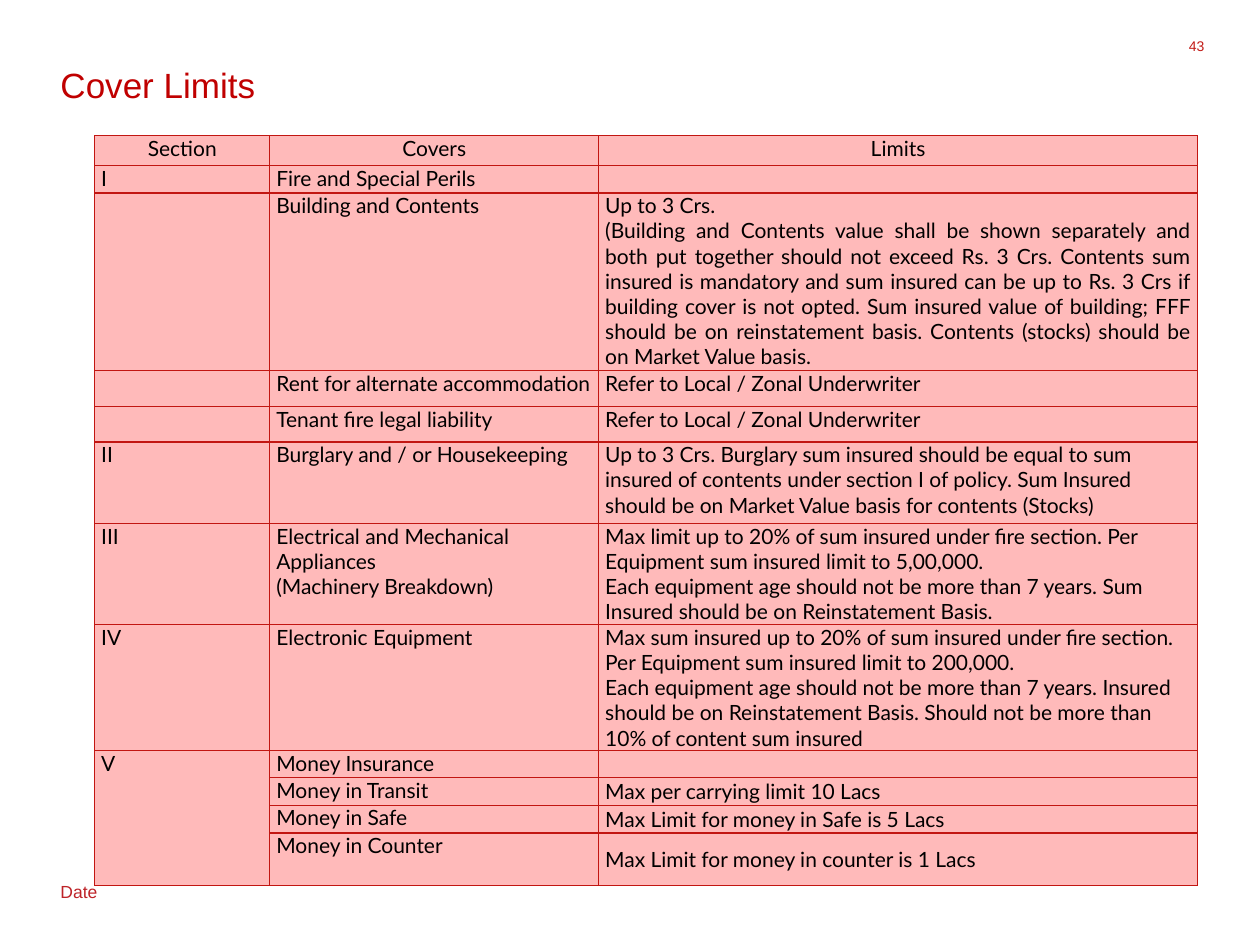
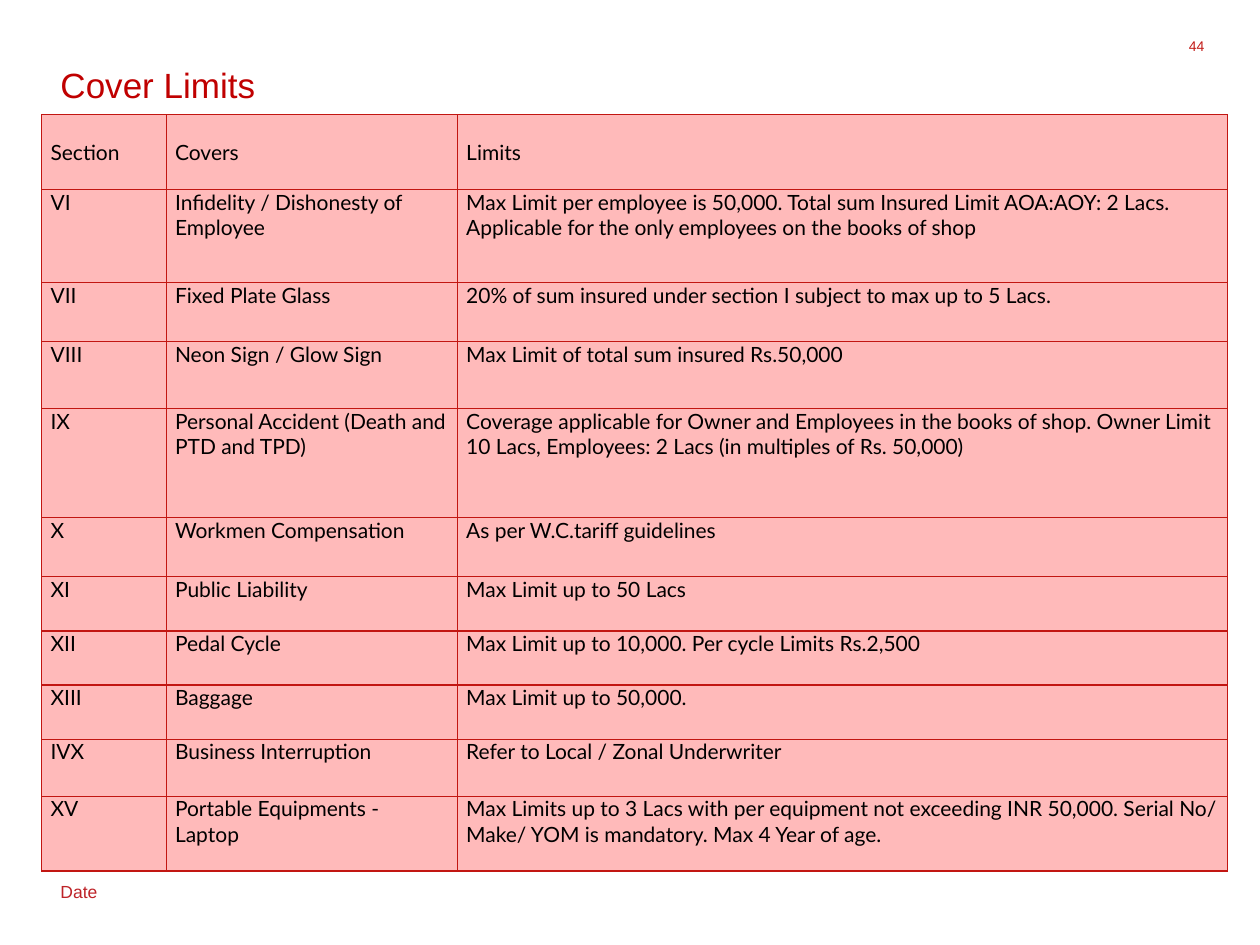
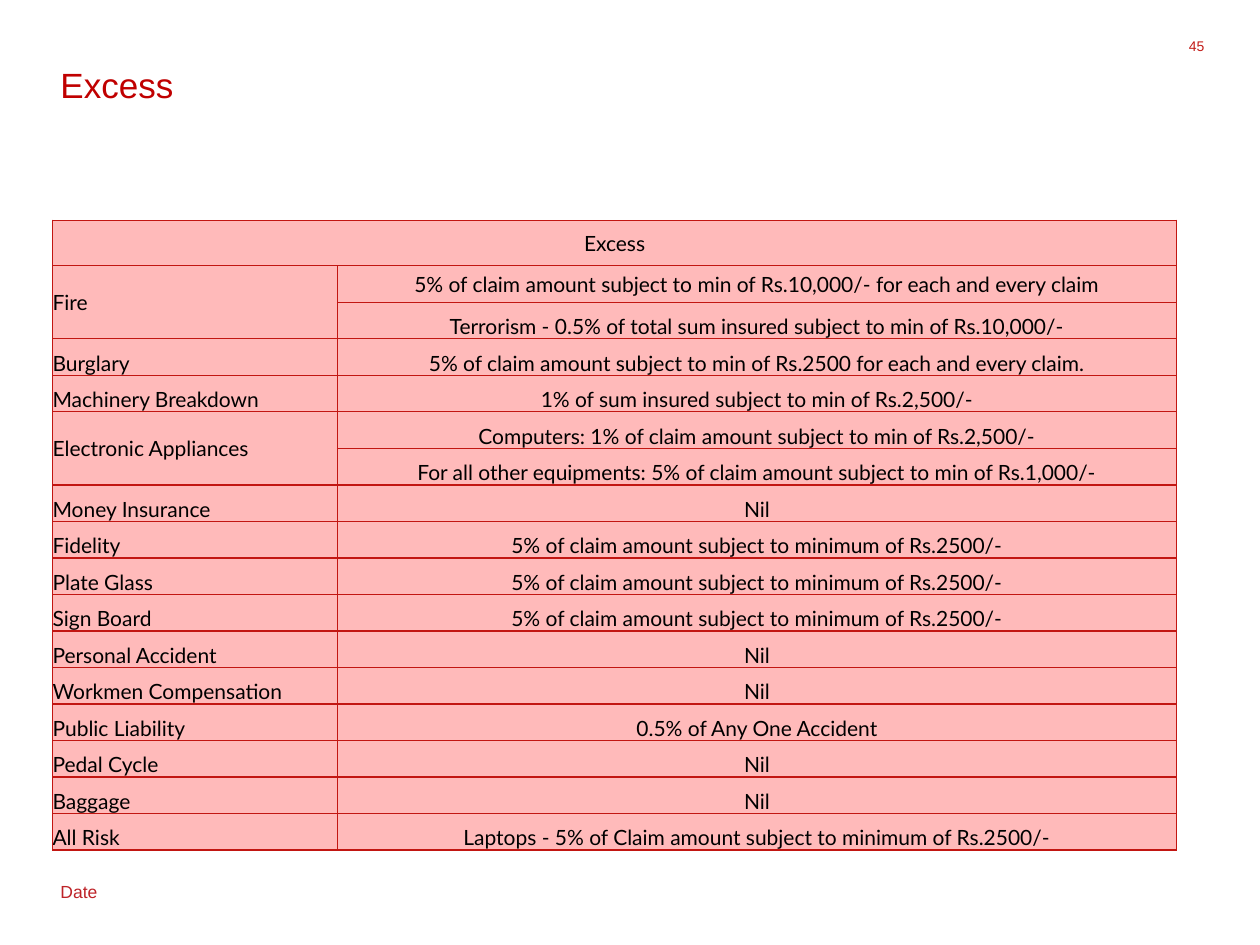
import dataclasses
import typing

import lxml.etree
import pptx
import pptx.dml.color
import pptx.enum.text
import pptx.oxml.ns
import pptx.util

Cm = pptx.util.Cm
Pt = pptx.util.Pt
Align = pptx.enum.text.PP_ALIGN
Anchor = pptx.enum.text.MSO_ANCHOR

COLORS = {
    "background": "FFFFFF",
    "title": "C00000",
    "date": "BE2328",
    "number": "C21B17",
    "cell": "FFBABA",
    "border": "C21612",
    "text": "000000",
}
BORDER_WIDTH = Pt(0.75)
Position = tuple[int, int]


@dataclasses.dataclass(frozen=True)
class TableSlide:
    title: str
    number: int
    left: float
    top: float
    columns: tuple[float, ...]
    heights: tuple[float, ...]
    rows: tuple[tuple[str, ...], ...]
    side_margin: float = 0
    header_margin: float = 0
    anchor: Anchor = Anchor.TOP
    header_align: Align = Align.LEFT
    column_aligns: tuple[Align, ...] = (Align.LEFT,) * 3
    aligns: dict[Position, Align] = dataclasses.field(default_factory=dict)
    middle: tuple[Position, ...] = ()
    merges: tuple[tuple[Position, Position], ...] = ()


UNDERWRITER = "Refer to Local / Zonal Underwriter"
MINIMUM = "5% of claim amount subject to minimum of Rs.2500/-"
HEADINGS = ("Section", "Covers", "Limits")

FIRST_LIMITS = (
    HEADINGS,
    ("I", "Fire and Special Perils", ""),
    ("", "Building and Contents",
     "Up to 3 Crs.\n(Building and Contents value shall be shown separately and both put "
     "together should not exceed Rs. 3 Crs. Contents sum insured is mandatory and sum "
     "insured can be up to Rs. 3 Crs if building cover is not opted. Sum insured value of "
     "building; FFF should be on reinstatement basis. Contents (stocks) should be on "
     "Market Value basis."),
    ("", "Rent for alternate accommodation", UNDERWRITER),
    ("", "Tenant fire legal liability", UNDERWRITER),
    ("II", "Burglary and / or Housekeeping",
     "Up to 3 Crs. Burglary sum insured should be equal to sum insured of contents under "
     "section I of policy. Sum Insured should be on Market Value basis for contents (Stocks)"),
    ("III", "Electrical and Mechanical Appliances\n(Machinery Breakdown)",
     "Max limit up to 20% of sum insured under fire section. Per Equipment sum insured "
     "limit to 5,00,000.\nEach equipment age should not be more than 7 years. Sum Insured "
     "should be on Reinstatement Basis."),
    ("IV", "Electronic Equipment",
     "Max sum insured up to 20% of sum insured under fire section. Per Equipment sum "
     "insured limit to 200,000.\nEach equipment age should not be more than 7 years. "
     "Insured should be on Reinstatement Basis. Should not be more than 10% of content "
     "sum insured"),
    ("V", "Money Insurance", ""),
    ("", "Money in Transit", "Max per carrying limit 10 Lacs"),
    ("", "Money in Safe", "Max Limit for money in Safe is 5 Lacs"),
    ("", "Money in Counter", "Max Limit for money in counter is 1 Lacs"),
)

SECOND_LIMITS = (
    HEADINGS,
    ("VI", "Infidelity / Dishonesty of Employee",
     "Max Limit per employee is 50,000. Total sum Insured Limit AOA:AOY: 2 Lacs. "
     "Applicable for the only employees on the books of shop"),
    ("VII", "Fixed Plate Glass",
     "20% of sum insured under section I subject to max up to 5 Lacs."),
    ("VIII", "Neon Sign / Glow Sign", "Max Limit of total sum insured Rs.50,000"),
    ("IX", "Personal Accident (Death and PTD and TPD)",
     "Coverage applicable for Owner and Employees in the books of shop. Owner Limit "
     "10 Lacs, Employees: 2 Lacs (in multiples of Rs. 50,000)"),
    ("X", "Workmen Compensation", "As per W.C.tariff guidelines"),
    ("XI", "Public Liability", "Max Limit up to 50 Lacs"),
    ("XII", "Pedal Cycle", "Max Limit up to 10,000. Per cycle Limits Rs.2,500"),
    ("XIII", "Baggage", "Max Limit up to 50,000."),
    ("IVX", "Business Interruption", UNDERWRITER),
    ("XV", "Portable Equipments - Laptop",
     "Max Limits up to 3 Lacs with per equipment not exceeding INR 50,000. Serial No/ "
     "Make/ YOM is mandatory. Max 4 Year of age."),
)

EXCESSES = (
    ("Excess", ""),
    ("Fire", "5% of claim amount subject to min of Rs.10,000/- for each and every claim"),
    ("", "Terrorism - 0.5% of total sum insured subject to min of Rs.10,000/-"),
    ("Burglary", "5% of claim amount subject to min of Rs.2500 for each and every claim."),
    ("Machinery Breakdown", "1% of sum insured subject to min of Rs.2,500/-"),
    ("Electronic Appliances", "Computers: 1% of claim amount subject to min of Rs.2,500/-"),
    ("", "For all other equipments: 5% of claim amount subject to min of Rs.1,000/-"),
    ("Money Insurance", "Nil"),
    ("Fidelity", MINIMUM),
    ("Plate Glass", MINIMUM),
    ("Sign Board", MINIMUM),
    ("Personal Accident", "Nil"),
    ("Workmen Compensation", "Nil"),
    ("Public Liability", "0.5% of Any One Accident"),
    ("Pedal Cycle", "Nil"),
    ("Baggage", "Nil"),
    ("All Risk", "Laptops - 5% of Claim amount subject to minimum of Rs.2500/-"),
)
EXCESS_HEADER = 0.92
EXCESS_ROWS = len(EXCESSES) - 1
EXCESS_ROW = (12.7 - EXCESS_HEADER) / EXCESS_ROWS

TABLE_SLIDES = (
    TableSlide(
        "Cover Limits", 43, 1.91, 2.74, (3.53, 6.63, 12.07),
        (0.6, 0.55, 3.58, 0.72, 0.72, 1.64, 2.04, 2.54, 0.55, 0.55, 0.56, 1.06),
        FIRST_LIMITS,
        side_margin=0.13,
        header_align=Align.CENTER,
        aligns={(2, 2): Align.JUSTIFY},
        middle=((9, 2), (10, 2), (11, 2)),
        merges=(((8, 0), (11, 0)),),
    ),
    TableSlide(
        "Cover Limits", 44, 0.84, 2.31, (2.51, 5.87, 15.52),
        (1.51, 1.88, 1.19, 1.35, 2.2, 1.19, 1.09, 1.09, 1.09, 1.15, 1.51),
        SECOND_LIMITS,
        side_margin=0.18,
        header_margin=0.51,
    ),
    TableSlide(
        "Excess", 45, 1.06, 4.44, (5.74, 16.92),
        (EXCESS_HEADER,) + (EXCESS_ROW,) * EXCESS_ROWS,
        EXCESSES,
        anchor=Anchor.BOTTOM,
        header_align=Align.CENTER,
        column_aligns=(Align.LEFT, Align.CENTER),
        middle=((0, 0), (1, 0), (1, 1), (5, 0)),
        merges=(((0, 0), (0, 1)), ((1, 0), (2, 0)), ((5, 0), (6, 0))),
    ),
)


def rgb(name: str) -> pptx.dml.color.RGBColor:
    return pptx.dml.color.RGBColor.from_string(COLORS[name])


def write_text(text_frame: typing.Any, text: str, *, size: float, color: str,
               font: str = "Arial", align: Align = Align.LEFT,
               line_spacing: typing.Any = None, space_after: float = 0) -> None:
    for index, line in enumerate(text.split("\n")):
        paragraph = text_frame.add_paragraph() if index else text_frame.paragraphs[0]
        paragraph.alignment = align
        paragraph.line_spacing = line_spacing
        paragraph.space_after = Pt(space_after)
        if not line:
            lxml.etree.SubElement(paragraph._p, pptx.oxml.ns.qn("a:endParaRPr"),
                                  sz=str(size * 100))
            continue
        run = paragraph.add_run()
        run.text = line
        run.font.name = font
        run.font.size = Pt(size)
        run.font.bold = False
        run.font.color.rgb = rgb(color)


def add_text(slide: typing.Any, text: str, left: float, top: float, width: float,
             height: float, *, wrap: bool = True, inset: bool = True,
             **text_format: typing.Any) -> None:
    shape = slide.shapes.add_textbox(Cm(left), Cm(top), Cm(width), Cm(height))
    text_frame = shape.text_frame
    text_frame.word_wrap = wrap
    if not inset:
        text_frame.margin_left = text_frame.margin_right = 0
        text_frame.margin_top = text_frame.margin_bottom = 0
    write_text(text_frame, text, **text_format)


def add_borders(cell: typing.Any) -> None:
    properties = cell._tc.get_or_add_tcPr()
    for index, side in enumerate(("lnL", "lnR", "lnT", "lnB")):
        line = lxml.etree.Element(pptx.oxml.ns.qn(f"a:{side}"), w=str(BORDER_WIDTH))
        fill = lxml.etree.SubElement(line, pptx.oxml.ns.qn("a:solidFill"))
        lxml.etree.SubElement(fill, pptx.oxml.ns.qn("a:srgbClr"), val=COLORS["border"])
        properties.insert(index, line)


def add_table(slide: typing.Any, content: TableSlide) -> None:
    frame = slide.shapes.add_table(
        len(content.rows), len(content.columns), Cm(content.left), Cm(content.top),
        Cm(sum(content.columns)), Cm(sum(content.heights)))
    table = frame.table
    table.first_row = False
    table.horz_banding = False
    for column, width in zip(table.columns, content.columns):
        column.width = Cm(width)
    for row_index, (height, texts) in enumerate(zip(content.heights, content.rows)):
        table.rows[row_index].height = Cm(height)
        for column_index, text in enumerate(texts):
            position = (row_index, column_index)
            cell = table.cell(*position)
            cell.margin_left = cell.margin_right = Cm(content.side_margin)
            cell.margin_top = Cm(0 if row_index else content.header_margin)
            cell.margin_bottom = 0
            cell.vertical_anchor = Anchor.MIDDLE if position in content.middle else content.anchor
            cell.fill.solid()
            cell.fill.fore_color.rgb = rgb("cell")
            add_borders(cell)
            align = content.column_aligns[column_index] if row_index else content.header_align
            write_text(cell.text_frame, text, size=12, color="text", font="Lato",
                       align=content.aligns.get(position, align))
    for start, end in content.merges:
        table.cell(*start).merge(table.cell(*end))


def add_table_slide(presentation: typing.Any, content: TableSlide) -> None:
    slide = presentation.slides.add_slide(presentation.slide_layouts[6])
    slide.background.fill.solid()
    slide.background.fill.fore_color.rgb = rgb("background")
    add_text(slide, "Date", 0.97, 17.58, 1.27, 0.71, wrap=False, size=10, color="date",
             line_spacing=1.15, space_after=10)
    add_text(slide, str(content.number), 23.72, 0.76, 0.56, 0.51, inset=False, size=8,
             color="number", align=Align.RIGHT)
    add_table(slide, content)
    add_text(slide, content.title, 0.97, 1.22, 23.29, 1.45, size=20, color="title",
             line_spacing=Pt(22))


def main() -> None:
    presentation = pptx.Presentation()
    presentation.slide_width = Cm(25.4)
    presentation.slide_height = Cm(19.05)
    for content in TABLE_SLIDES:
        add_table_slide(presentation, content)
    presentation.save("out.pptx")


if __name__ == "__main__":
    main()
